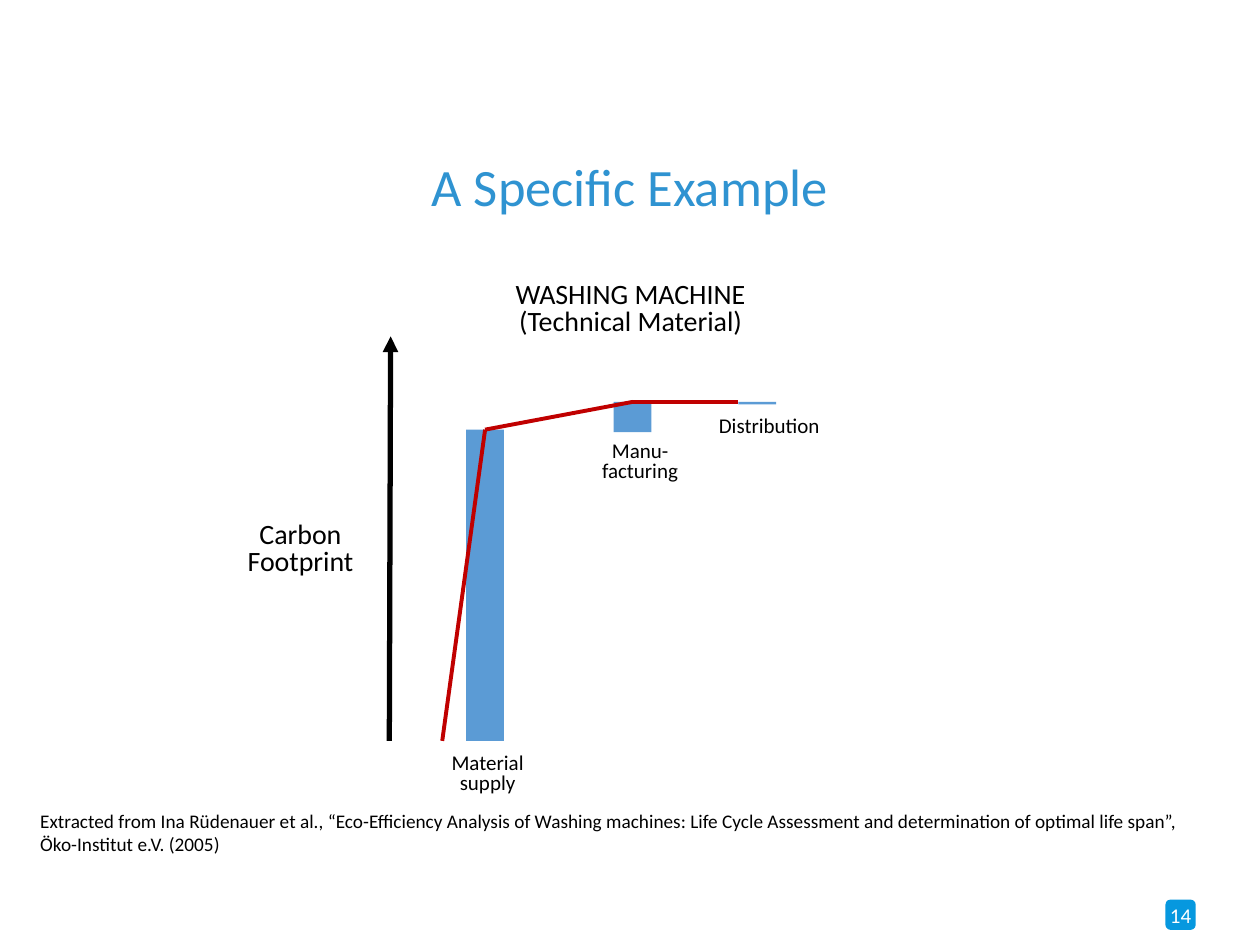
"""Builds the washing machine carbon footprint slide."""
from lxml import etree
from pptx import Presentation
from pptx.dml.color import RGBColor
from pptx.enum import shapes, text
from pptx import util as u
from pptx.oxml.ns import qn

W, H = 10, 7.5
BASE, BAR_W = 5.88, 0.3
BLACK, BLUE, RED = "000000", "5B9BD5", "C00000"

TITLE = "A Specific Example"
HEADING = ["WASHING MACHINE", "(Technical Material)"]
AXIS_LABEL = "Carbon Footprint"
SOURCE = ("Extracted from Ina Rüdenauer et al., “Eco-Efficiency Analysis of Washing machines: "
          "Life Cycle Assessment and determination of optimal life span”, Öko-Institut e.V. (2005)")
PAGE = "14"

# label, bar left, bar top, bar height, label box
STAGES = [
    ("Material supply", 3.7, 3.41, 2.47, (3.36, 5.94, 1.02, 0.41)),
    ("Manu-facturing", 4.87, 3.19, 0.24, (4.57, 3.46, 1.02, 0.41)),
    ("Distribution", 5.86, 3.19, 0.02, (5.59, 3.26, 1.03, 0.26)),
]


def color(value):
    return RGBColor.from_string(value)


def inches(*values):
    return [u.Inches(v) for v in values]


def write(sp, lines, size=12, fill=BLACK, align=text.PP_ALIGN.CENTER, spacing=0.8,
          anchor=text.MSO_ANCHOR.TOP, inset=None):
    tf = sp.text_frame
    tf.word_wrap = True
    tf.vertical_anchor = anchor
    if inset is not None:
        tf.margin_left = tf.margin_right = tf.margin_top = tf.margin_bottom = u.Inches(inset)
    for i, line in enumerate([lines] if isinstance(lines, str) else lines):
        p = tf.add_paragraph() if i else tf.paragraphs[0]
        p.alignment, p.line_spacing = align, spacing
        r = p.add_run()
        r.text = line
        r.font.name, r.font.size, r.font.color.rgb = "Calibri", u.Pt(size), color(fill)


def add_text(s, box, lines, **style):
    write(s.shapes.add_textbox(*inches(*box)), lines, **style)


def add_box(s, box, fill, kind=shapes.MSO_SHAPE.RECTANGLE):
    sp = s.shapes.add_shape(kind, *inches(*box))
    sp.shadow.inherit = False
    sp.fill.solid()
    sp.fill.fore_color.rgb = color(fill)
    sp.line.fill.background()
    return sp


def add_line(s, start, end, fill, width, arrow=False):
    sp = s.shapes.add_connector(shapes.MSO_CONNECTOR.STRAIGHT, *inches(*start, *end))
    sp.line.color.rgb, sp.line.width = color(fill), u.Pt(width)
    if arrow:
        etree.SubElement(sp.line._get_or_add_ln(), qn("a:tailEnd"), type="triangle")
    etree.SubElement(sp._element.spPr, qn("a:effectLst"))


def main():
    prs = Presentation()
    prs.slide_width, prs.slide_height = inches(W, H)
    s = prs.slides.add_slide(prs.slide_layouts[6])

    badge = add_box(s, (9.25, 7.14, 0.24, 0.24), "0698DF", shapes.MSO_SHAPE.ROUNDED_RECTANGLE)
    write(badge, PAGE, fill="FFFFFF", spacing=1, anchor=text.MSO_ANCHOR.MIDDLE, inset=0)

    add_line(s, (3.09, BASE), (3.1, 2.67), BLACK, 3, arrow=True)
    add_text(s, (1.81, 4.1, 1.15, 0.53), AXIS_LABEL, size=16)

    for label, left, top, height, box in STAGES:
        add_box(s, (left, top, BAR_W, height), BLUE)
        add_text(s, box, label)

    (_, x1, y1, *_), (_, x2, y2, *_), (_, x3, y3, *_) = STAGES
    curve = [(3.51, BASE), (x1 + BAR_W / 2, y1), (x2 + BAR_W / 2, y2), (x3, y3)]
    for start, end in zip(curve, curve[1:]):
        add_line(s, start, end, RED, 2.25)

    add_text(s, (0.22, 6.37, 9.42, 0.47), SOURCE, size=11, align=text.PP_ALIGN.LEFT, spacing=1)
    add_text(s, (3.8, 2.2, 2.41, 0.54), HEADING, size=16)
    add_text(s, (0, 1.04, W, 0.92), TITLE, size=30, fill="2F93D1", spacing=0.9,
             anchor=text.MSO_ANCHOR.MIDDLE)
    prs.save("out.pptx")


if __name__ == "__main__":
    main()
